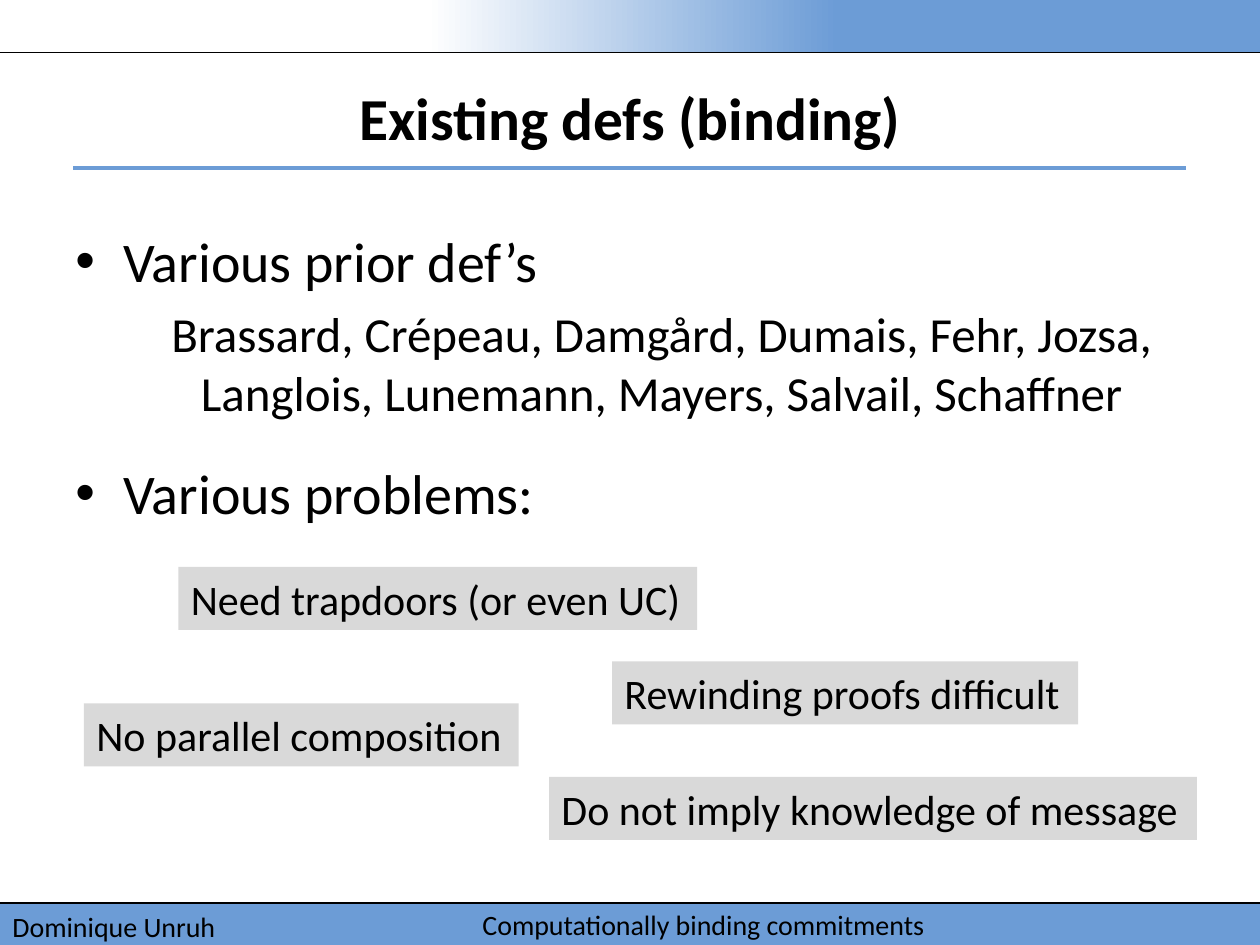
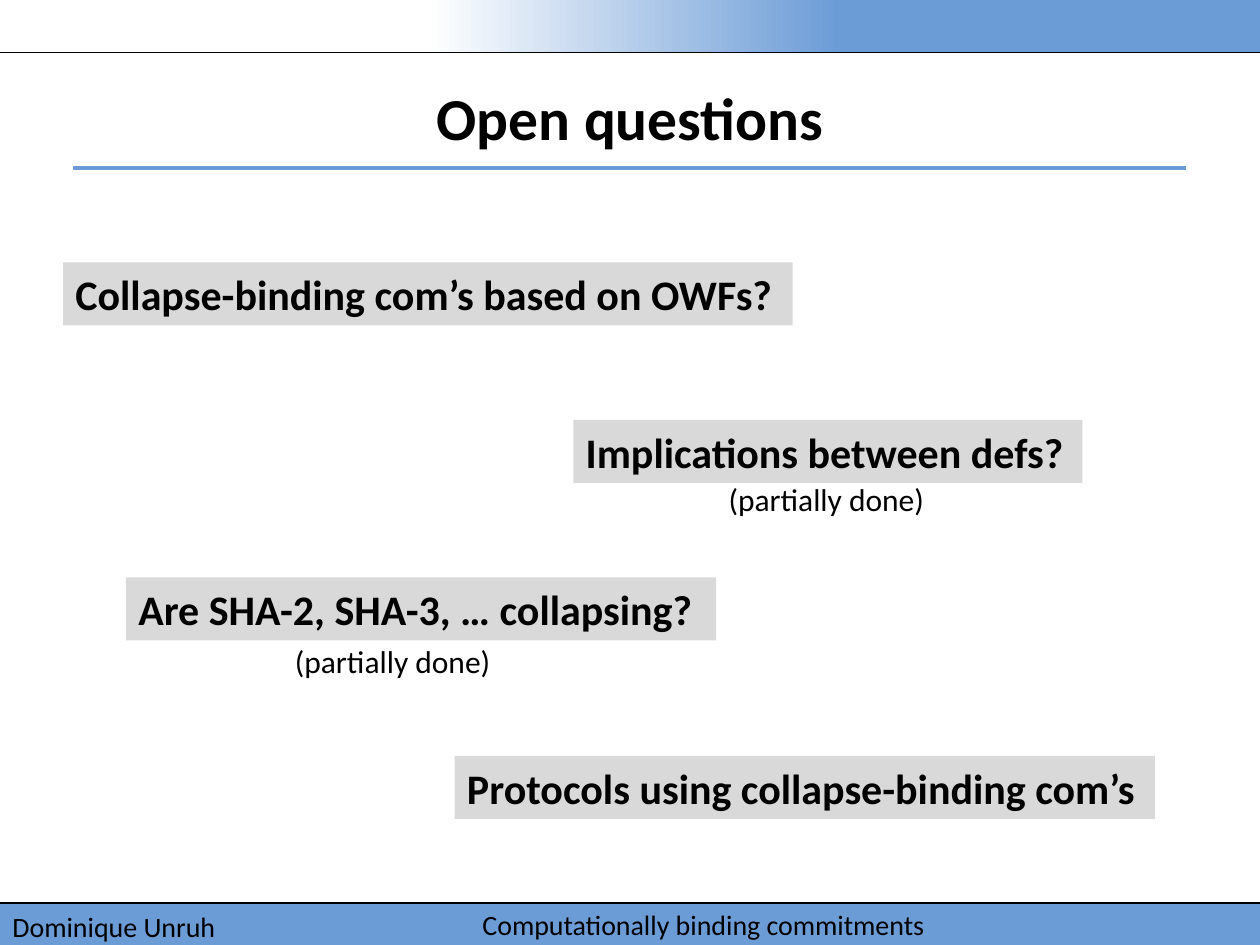
from lxml import etree
from pptx import Presentation
from pptx.dml.color import RGBColor
from pptx.enum.shapes import MSO_CONNECTOR, MSO_SHAPE
from pptx.enum.text import MSO_ANCHOR, PP_ALIGN
from pptx.oxml.ns import qn
from pptx.util import Inches, Pt

RECT = MSO_SHAPE.RECTANGLE
STRAIGHT = MSO_CONNECTOR.STRAIGHT
TOP, MIDDLE = MSO_ANCHOR.TOP, MSO_ANCHOR.MIDDLE
LEFT, CENTER = PP_ALIGN.LEFT, PP_ALIGN.CENTER
BLUE, GRAY, BLACK, WHITE = "6C9CD6", "D9D9D9", "000000", "FFFFFF"
FONT = "Calibri"

prs = Presentation()
prs.slide_width, prs.slide_height = Inches(10), Inches(7.5)
CELL = prs.slide_width / 120
COLS, ROWS = 120, 90
HEAD, RULE, FOOT = 5, 16, 86
MARGIN = 7
rgb = RGBColor.from_string


def add_box(s, x, y, w, h, text="", size=24, bold=False, align=LEFT, anchor=TOP, fill=None):
    place = [round(v * CELL) for v in (x, y, w, h)]
    if fill:
        sp = s.shapes.add_shape(RECT, *place)
        sp.shadow.inherit = False
        sp.fill.solid()
        sp.fill.fore_color.rgb = rgb(fill)
        sp.line.fill.background()
    else:
        sp = s.shapes.add_textbox(*place)
    tf = sp.text_frame
    tf.word_wrap = True
    tf.vertical_anchor = anchor
    if text:
        add_text(tf.paragraphs[0], text, size, bold, align)
    return sp


def add_text(p, text, size, bold=False, align=LEFT):
    p.alignment = align
    r = p.add_run()
    r.text = text
    for name, value in {"name": FONT, "size": Pt(size), "bold": bold}.items():
        setattr(r.font, name, value)
    r.font.color.rgb = rgb(BLACK)


slides = []
for title in ("Existing defs (binding)", "Open questions"):
    s = prs.slides.add_slide(prs.slide_layouts[6])
    slides.append(s)
    add_box(s, 0, FOOT, COLS, ROWS - FOOT, fill=BLUE)
    band = add_box(s, 32.8, 0, COLS - 32.8, HEAD, fill=BLUE)
    band.fill.gradient()
    band.fill.gradient_angle = 0
    for stop, (position, color) in zip(band.fill.gradient_stops, ((0.09, WHITE), (0.54, BLUE))):
        stop.position = position
        stop.color.rgb = rgb(color)
    for x1, x2, y, color, width in (
        (0, COLS, HEAD, BLACK, 0.75),
        (0, COLS, FOOT, BLACK, 0.75),
        (MARGIN, COLS - MARGIN, RULE, BLUE, 2),
    ):
        line = s.shapes.add_connector(STRAIGHT, *[round(v * CELL) for v in (x1, y, x2, y)])
        line.line.color.rgb = rgb(color)
        line.line.width = Pt(width)
        etree.SubElement(line._element.spPr, qn("a:effectLst"))
    add_box(s, 0, FOOT, 32.8, ROWS - FOOT, "Dominique Unruh", 16)
    add_box(s, 29, FOOT, 76, ROWS - FOOT, "Computationally binding commitments", 16,
            align=CENTER, anchor=MIDDLE)
    add_box(s, MARGIN, 6, COLS - 2 * MARGIN, 10.2, title, 34, True, CENTER, MIDDLE)

definitions, questions = slides

tf = add_box(definitions, 6, 21, 108, 59.4).text_frame
authors = ("Brassard, Crépeau, Damgård, Dumais, Fehr, Jozsa, "
           "Langlois, Lunemann, Mayers, Salvail, Schaffner")
for i, (text, size, before, bullet) in enumerate((
    ("Various prior def’s", 32, 0, True),
    (authors, 28, 5.6, False),
    ("Various problems:", 32, 21, True),
)):
    p = tf.add_paragraph() if i else tf.paragraphs[0]
    pPr = p._p.get_or_add_pPr()
    pPr.set("marL", str(Inches(0.38 if bullet else 0.5)))
    pPr.set("indent", str(Inches(-0.38 if bullet else 0)))
    if bullet:
        etree.SubElement(pPr, qn("a:buFont"), typeface="Arial")
        etree.SubElement(pPr, qn("a:buChar"), char="•")
    p.space_before = Pt(before)
    add_text(p, text, size, align=LEFT if bullet else CENTER)

for s, bold, labels in (
    (definitions, False, (
        (17, 54, 49.4, "Need trapdoors (or even UC)"),
        (8, 67, 41.4, "No parallel composition"),
        (58.3, 63, 44.4, "Rewinding proofs difficult"),
        (52.3, 74, 61.7, "Do not imply knowledge of message"),
    )),
    (questions, True, (
        (6, 25, 69.5, "Collapse-binding com’s based on OWFs?"),
        (43.3, 72, 66.7, "Protocols using collapse-binding com’s"),
        (54.6, 40, 48.5, "Implications between defs?"),
        (12, 55, 56.2, "Are SHA-2, SHA-3, … collapsing?"),
    )),
):
    for x, y, w, text in labels:
        add_box(s, x, y, w, 6, text, bold=bold, fill=GRAY)

for x, y in ((68.2, 45.1), (26.9, 60.6)):
    add_box(questions, x, y, 21.2, 4.8, "(partially done)", 18)

prs.save("out.pptx")
